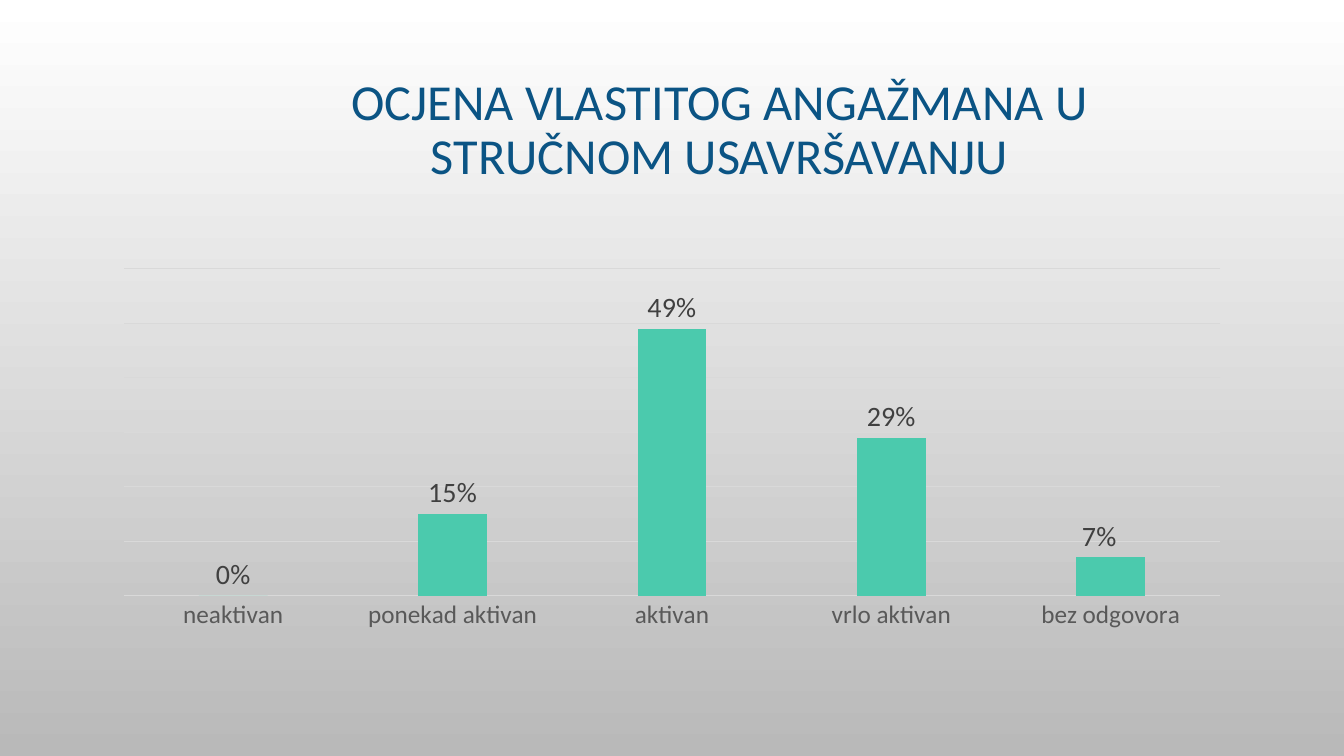
from lxml import etree
from pptx import Presentation
from pptx import util as u
from pptx.chart import data as chart_data
from pptx.dml import color
from pptx.enum import chart as charts, text
from pptx.oxml import ns

WHITE = color.RGBColor(0xFF, 0xFF, 0xFF)
SILVER = color.RGBColor(0xB9, 0xB9, 0xB9)
NAVY = color.RGBColor(0x0B, 0x54, 0x84)
TEAL = color.RGBColor(0x4B, 0xCA, 0xAD)
GRID = color.RGBColor(0xD9, 0xD9, 0xD9)
AXIS_TEXT = color.RGBColor(0x59, 0x59, 0x59)
LABEL_TEXT = color.RGBColor(0x40, 0x40, 0x40)

RATINGS = {
    "neaktivan": 0,
    "ponekad aktivan": 0.15,
    "aktivan": 0.49,
    "vrlo aktivan": 0.29,
    "bez odgovora": 0.07,
}


def set_attributes(target, values):
    for name, value in values.items():
        setattr(target, name, value)


def style_font(font, size, rgb):
    set_attributes(font, {"name": "Calibri", "size": u.Pt(size)})
    font.color.rgb = rgb


def style_line(line):
    line.color.rgb = GRID
    line.width = u.Pt(0.75)


def paint_background(slide):
    fill = slide.background.fill
    fill.gradient()
    fill.gradient_angle = 270
    for stop, rgb in zip(fill.gradient_stops, (WHITE, SILVER)):
        stop.color.rgb = rgb


def add_title(slide, wording, left, top, width, height):
    shape = slide.shapes.add_textbox(*map(u.Pt, (left, top, width, height)))
    set_attributes(shape.text_frame, {
        "word_wrap": True,
        "vertical_anchor": text.MSO_ANCHOR.MIDDLE,
    })
    paragraph = shape.text_frame.paragraphs[0]
    set_attributes(paragraph, {
        "text": wording,
        "alignment": text.PP_ALIGN.CENTER,
        "line_spacing": 0.9,
    })
    style_font(paragraph.runs[0].font, 36, NAVY)


def style_axes(chart):
    set_attributes(chart.category_axis, {
        "major_tick_mark": charts.XL_TICK_MARK.NONE,
        "has_major_gridlines": False,
    })
    style_font(chart.category_axis.tick_labels.font, 18, AXIS_TEXT)
    style_line(chart.category_axis.format.line)
    set_attributes(chart.value_axis, {
        "visible": False,
        "has_major_gridlines": True,
        "minimum_scale": 0,
        "maximum_scale": 0.6,
        "major_unit": 0.1,
    })
    style_line(chart.value_axis.major_gridlines.format.line)


def shift_label(series, index, offset):
    label = series.points[index].data_label
    style_font(label.font, 20, LABEL_TEXT)
    label.position = charts.XL_LABEL_POSITION.OUTSIDE_END
    element = series._element.find(".//" + ns.qn("c:dLbl"))
    layout = etree.Element(ns.qn("c:layout"))
    manual = etree.SubElement(layout, ns.qn("c:manualLayout"))
    for axis, distance in (("x", offset), ("y", 0)):
        etree.SubElement(manual, ns.qn("c:" + axis)).set("val", str(distance))
    element.insert(1, layout)


def add_rating_chart(slide, left, top, width, height):
    data = chart_data.CategoryChartData(number_format="0%")
    data.categories = list(RATINGS)
    data.add_series("Series 1", list(RATINGS.values()))
    chart = slide.shapes.add_chart(
        charts.XL_CHART_TYPE.COLUMN_CLUSTERED,
        *map(u.Pt, (left, top, width, height)), data).chart
    set_attributes(chart, {"has_legend": False, "has_title": False})
    style_font(chart.font, 10, color.RGBColor(0, 0, 0))
    style_axes(chart)
    set_attributes(chart.plots[0], {
        "gap_width": 219, "overlap": -27, "vary_by_categories": False,
    })
    series = chart.plots[0].series[0]
    series.format.fill.solid()
    series.format.fill.fore_color.rgb = TEAL
    set_attributes(series.data_labels, {
        "show_value": True,
        "position": charts.XL_LABEL_POSITION.OUTSIDE_END,
        "number_format": "0%",
        "number_format_is_linked": False,
    })
    style_font(series.data_labels.font, 20, LABEL_TEXT)
    shift_label(series, len(RATINGS) - 1, -0.01)


def main():
    presentation = Presentation()
    set_attributes(presentation, {
        "slide_width": u.Pt(960), "slide_height": u.Pt(540),
    })
    slide = presentation.slides.add_slide(presentation.slide_layouts[6])
    paint_background(slide)
    add_title(slide, "OCJENA VLASTITOG ANGAŽMANA U STRUČNOM USAVRŠAVANJU",
              175.5, 42, 677, 103.5)
    add_rating_chart(slide, 72, 186.5, 816, 269)
    presentation.save("out.pptx")


if __name__ == "__main__":
    main()
